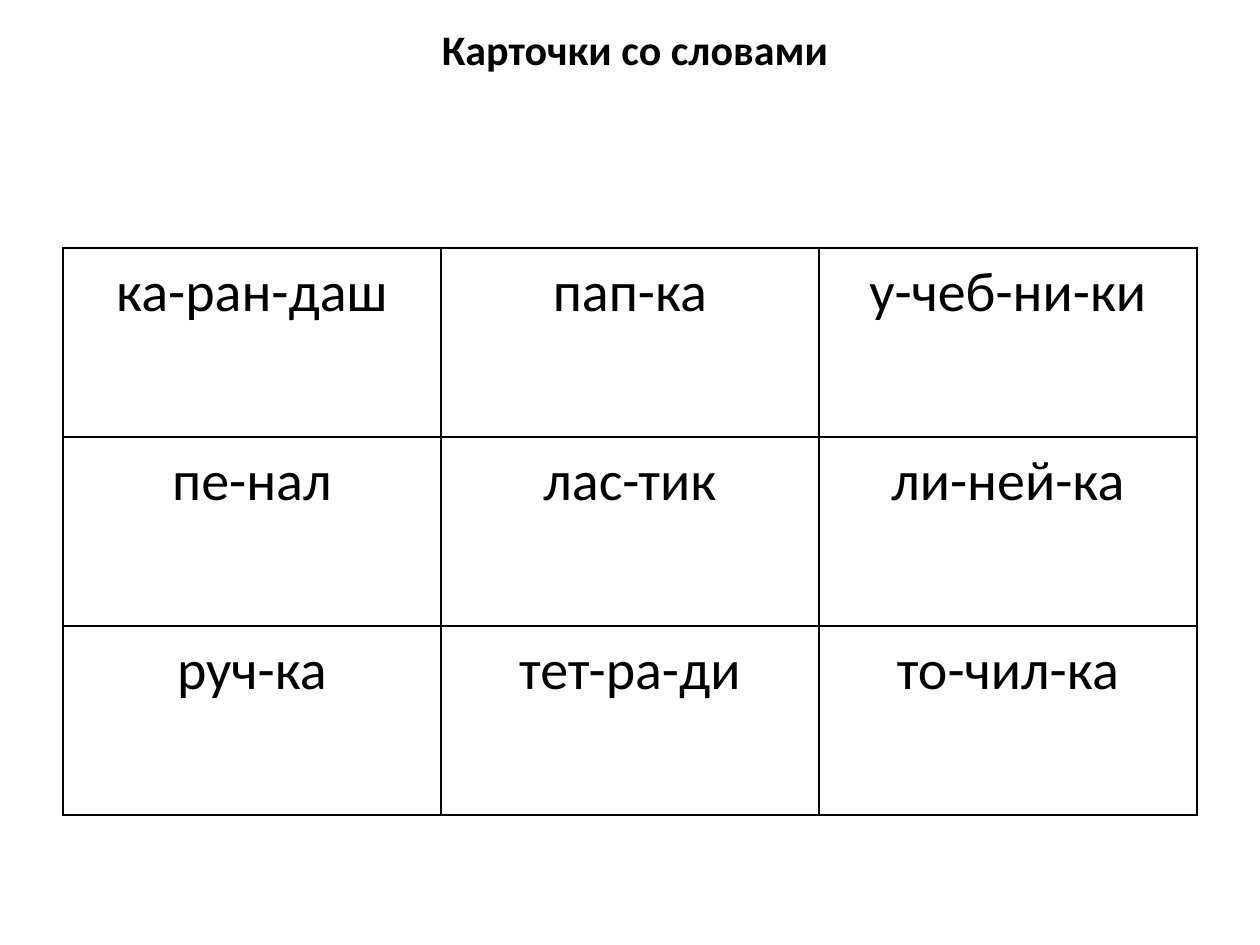
import pptx
import pptx.util
import pptx.dml.color
import pptx.enum.text
import pptx.oxml
from pptx.oxml.ns import nsdecls

# Content
TITLE = "Карточки со словами"
WORDS = [
    ["ка-ран-даш", "пап-ка", "у-чеб-ни-ки"],
    ["пе-нал", "лас-тик", "ли-ней-ка"],
    ["руч-ка", "тет-ра-ди", "то-чил-ка"],
]

# Look
BLACK = pptx.dml.color.RGBColor(0, 0, 0)
FONT = "Calibri"
MIDDLE = pptx.enum.text.MSO_ANCHOR.MIDDLE
CENTER = pptx.enum.text.PP_ALIGN.CENTER

# Layout in px, 126 to the inch
WIDE, HIGH = 1260, 945
LEFT, TOP = 63, 248
CARD_W, CARD_H = 378, 189


def px(n):
    return pptx.util.Emu(round(n * 914400 / 126))


def write(frame, text, size, bold=False, line=None, after=0):
    para = frame.paragraphs[0]
    para.alignment = CENTER
    para.line_spacing = line
    para.space_before = pptx.util.Pt(0)
    para.space_after = pptx.util.Pt(after)
    run = para.add_run()
    run.text = text
    run.font.name = FONT
    run.font.size = pptx.util.Pt(size)
    run.font.bold = bold
    run.font.color.rgb = BLACK


def border(cell):
    props = cell._tc.get_or_add_tcPr()
    for i, side in enumerate(("lnL", "lnR", "lnT", "lnB")):
        props.insert(i, pptx.oxml.parse_xml(
            f'<a:{side} {nsdecls("a")} w="{pptx.util.Pt(1)}"><a:solidFill>'
            f'<a:srgbClr val="{BLACK}"/></a:solidFill></a:{side}>'))


def main():
    deck = pptx.Presentation()
    deck.slide_width, deck.slide_height = px(WIDE), px(HIGH)
    slide = deck.slides.add_slide(deck.slide_layouts[5])

    # Title
    title = slide.shapes.title
    title.left, title.top = px(68), px(0)
    title.width, title.height = px(1134), px(97)
    title.text_frame.vertical_anchor = MIDDLE
    write(title.text_frame, TITLE, 24, bold=True)

    # Word cards
    rows, cols = len(WORDS), len(WORDS[0])
    table = slide.shapes.add_table(
        rows, cols, px(LEFT), px(TOP), px(cols * CARD_W), px(rows * CARD_H)).table
    table.first_row = table.horz_banding = False
    for r, row in enumerate(WORDS):
        for c, word in enumerate(row):
            cell = table.cell(r, c)
            cell.margin_left = cell.margin_right = px(9)
            cell.margin_top = cell.margin_bottom = 0
            cell.fill.background()
            border(cell)
            write(cell.text_frame, word, 32, line=1.15, after=10)

    deck.save("out.pptx")


if __name__ == "__main__":
    main()
